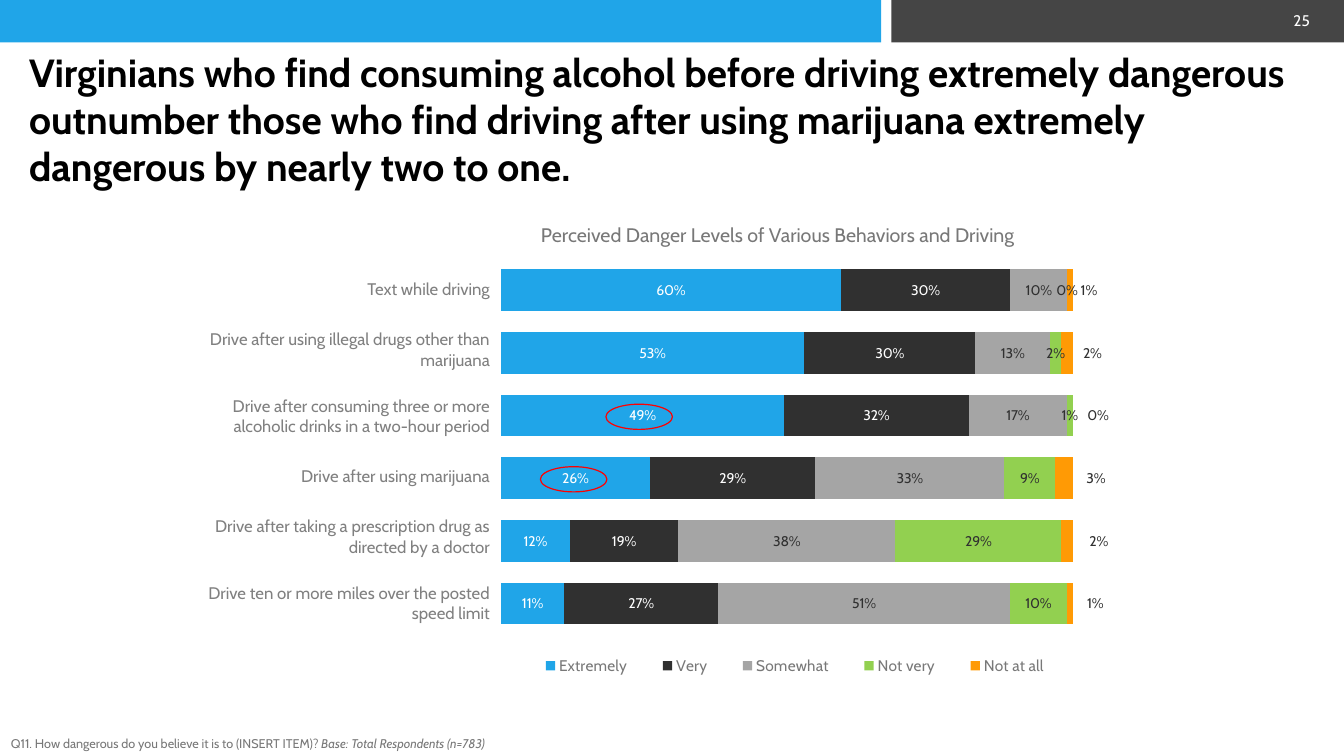
import dataclasses

import pptx
import pptx.chart.data
import pptx.dml.color
import pptx.enum.chart
import pptx.enum.shapes
import pptx.enum.text
import pptx.oxml
import pptx.oxml.ns
import pptx.util
from pptx.util import Inches

ALIGN = pptx.enum.text.PP_ALIGN
ANCHOR = pptx.enum.text.MSO_ANCHOR
SHAPE = pptx.enum.shapes.MSO_SHAPE


@dataclasses.dataclass(frozen=True)
class Theme:
    font: str = "Cabin"
    blue: str = "20A5E8"
    charcoal: str = "303030"
    silver: str = "A5A5A5"
    green: str = "92D050"
    orange: str = "FF9A05"
    band: str = "454545"
    grey: str = "787878"
    row_grey: str = "808080"
    black: str = "000000"
    white: str = "FFFFFF"
    red: str = "FF0000"
    headline: int = 28
    chart_title: int = 14
    row: int = 12
    small: int = 11
    label: int = 10
    footnote: int = 9


THEME = Theme()

# Behaviors from top to bottom: wording, shares per danger level, offset of the last label
BEHAVIORS = [
    ("Text while driving", (0.60, 0.30, 0.10, 0, 0.01), 0.03),
    ("Drive after using illegal drugs other than marijuana", (0.53, 0.30, 0.13, 0.02, 0.02), 0.04),
    ("Drive after consuming three or more alcoholic drinks in a two-hour period",
     (0.49, 0.32, 0.17, 0.01, 0), 0.04),
    ("Drive after using marijuana", (0.26, 0.29, 0.33, 0.09, 0.03), 0.05),
    ("Drive after taking a prescription drug as directed by a doctor",
     (0.12, 0.19, 0.38, 0.29, 0.02), 0.05),
    ("Drive ten or more miles over the posted speed limit", (0.11, 0.27, 0.51, 0.10, 0.01), 0.04),
]
# Danger levels: name, bar color, label color
LEVELS = [
    ("Extremely", THEME.blue, THEME.white),
    ("Very", THEME.charcoal, THEME.white),
    ("Somewhat", THEME.silver, THEME.charcoal),
    ("Not very", THEME.green, THEME.charcoal),
    ("Not at all", THEME.orange, THEME.charcoal),
]


def rgb(color):
    return pptx.dml.color.RGBColor.from_string(color)


def style_font(font, size, color):
    font.name = THEME.font
    font.size = pptx.util.Pt(size)
    font.color.rgb = rgb(color)


def add_run(paragraph, text, size, color, bold=False, italic=False):
    run = paragraph.add_run()
    run.text = text
    style_font(run.font, size, color)
    run.font.bold = bold
    run.font.italic = italic


def add_text(slide, box, runs, size, color, align=ALIGN.LEFT, anchor=ANCHOR.TOP):
    """Each run is a text followed by its emphasis."""
    frame = slide.shapes.add_textbox(*map(Inches, box)).text_frame
    frame.word_wrap = True
    frame.vertical_anchor = anchor
    frame.paragraphs[0].alignment = align
    for text, emphasis in runs:
        add_run(frame.paragraphs[0], text, size, color, **emphasis)


def add_outline_or_block(slide, kind, box, fill=None, line=None):
    shape = slide.shapes.add_shape(kind, *map(Inches, box))
    shape.shadow.inherit = False
    if fill:
        shape.fill.solid()
        shape.fill.fore_color.rgb = rgb(fill)
    else:
        shape.fill.background()
    if line:
        shape.line.color.rgb = rgb(line)
        shape.line.width = pptx.util.Pt(0.85)
    else:
        shape.line.fill.background()


def add_behavior_table(slide):
    table = slide.shapes.add_table(
        len(BEHAVIORS), 2, Inches(1.71), Inches(2.6), Inches(3.48), Inches(3.72)).table
    table.first_row = table.horz_banding = False
    for column, width in zip(table.columns, (3.25, 0.23)):
        column.width = Inches(width)
    for index, (behavior, _, _) in enumerate(BEHAVIORS):
        table.rows[index].height = Inches(0.54 if index % 3 == 0 else 0.66)
        for cell in table.rows[index].cells:
            cell.fill.solid()
            cell.fill.fore_color.rgb = rgb(THEME.white)
            cell.vertical_anchor = ANCHOR.MIDDLE
        paragraph = table.cell(index, 0).text_frame.paragraphs[0]
        paragraph.alignment = ALIGN.RIGHT
        add_run(paragraph, behavior, THEME.row, THEME.row_grey)


def manual_layout(**settings):
    """Layout element; the settings come in schema order."""
    fields = "".join(f'<c:{key} val="{value}"/>' for key, value in settings.items())
    return pptx.oxml.parse_xml(
        f'<c:layout {pptx.oxml.ns.nsdecls("c")}><c:manualLayout>{fields}</c:manualLayout></c:layout>')


def place_part(part, layout, before):
    """Put the layout in front of the child with the given tag."""
    for old in part.findall(pptx.oxml.ns.qn("c:layout")):
        part.remove(old)
    part.find(pptx.oxml.ns.qn(before)).addprevious(layout)


def add_danger_chart(slide):
    width, height = 6.3, 4.77
    bars = BEHAVIORS[::-1]
    data = pptx.chart.data.CategoryChartData(number_format="0%")
    data.categories = [str(number + 1) for number in range(len(bars))]
    for level, (name, _, _) in enumerate(LEVELS):
        data.add_series(name, [shares[level] for _, shares, _ in bars])
    chart = slide.shapes.add_chart(
        pptx.enum.chart.XL_CHART_TYPE.BAR_STACKED_100,
        Inches(4.86), Inches(2.48), Inches(width), Inches(height), data).chart
    chart.has_title = False
    style_font(chart.font, THEME.label, THEME.charcoal)
    chart.value_axis.has_major_gridlines = False
    chart.value_axis.visible = chart.category_axis.visible = False

    # Bars and their labels
    plot = chart.plots[0]
    plot.gap_width, plot.overlap = 50, 100
    plot.vary_by_categories = False
    for series, (_, fill, label_color) in zip(plot.series, LEVELS):
        series.format.fill.solid()
        series.format.fill.fore_color.rgb = rgb(fill)
        labels = series.data_labels
        labels.show_value = True
        labels.number_format, labels.number_format_is_linked = "0%", False
        style_font(labels.font, THEME.label, label_color)
        # Moved labels stand free, without leader lines
        for leader in series._element.iter(pptx.oxml.ns.qn("c:showLeaderLines")):
            leader.set("val", "0")

    # The last level is labeled to the right of the bars
    last = plot.series[len(LEVELS) - 1]
    for index, (_, shares, _) in enumerate(bars):
        paragraph = last.points[index].data_label.text_frame.paragraphs[0]
        add_run(paragraph, f"{shares[-1]:.0%}", THEME.label, THEME.charcoal)
    for label, (_, _, offset) in zip(last._element.iter(pptx.oxml.ns.qn("c:dLbl")), bars):
        place_part(label, manual_layout(x=offset, y=0), "c:tx")

    # Legend and plot area
    chart.has_legend = True
    chart.legend.position = pptx.enum.chart.XL_LEGEND_POSITION.BOTTOM
    chart.legend.include_in_layout = False
    style_font(chart.legend.font, THEME.small, THEME.grey)
    place_part(chart.legend._element,
               manual_layout(xMode="edge", yMode="edge", x=0.04, y=0.83, w=0.88, h=0.07),
               "c:overlay")
    place_part(plot._element.getparent(),
               manual_layout(layoutTarget="inner", xMode="edge", yMode="edge",
                             x=0.11 / width, y=0.09 / height,
                             w=5.67 / width, h=3.73 / height),
               "c:barChart")


def main():
    deck = pptx.Presentation()
    deck.slide_width, deck.slide_height = Inches(13.33), Inches(7.5)
    slide = deck.slides.add_slide(deck.slide_layouts[6])

    # Header
    add_outline_or_block(slide, SHAPE.RECTANGLE, (8.84, 0, 4.49, 0.42), fill=THEME.band)
    add_outline_or_block(slide, SHAPE.RECTANGLE, (0, 0, 8.74, 0.42), fill=THEME.blue)
    add_text(slide, (0.19, 0.6, 12.66, 1.16),
             [("Virginians who find consuming alcohol before driving extremely dangerous "
               "outnumber those who find driving after using marijuana extremely "
               "dangerous by nearly two to one.", {"bold": True})],
             THEME.headline, THEME.black, anchor=ANCHOR.MIDDLE)
    add_text(slide, (12.49, 0.04, 0.6, 0.33), [("25", {})],
             THEME.small, THEME.white, ALIGN.RIGHT, ANCHOR.MIDDLE)

    # Danger levels by behavior
    add_behavior_table(slide)
    add_danger_chart(slide)
    add_text(slide, (4.95, 2.16, 5.53, 0.34),
             [("Perceived Danger Levels of Various Behaviors and Driving", {})],
             THEME.chart_title, THEME.grey, ALIGN.CENTER)

    # Question wording
    add_text(slide, (0.01, 7.25, 8.16, 0.25),
             [("Q11. How dangerous do you believe it is to (INSERT ITEM)? ", {}),
              ("Base: Total Respondents (n=783)", {"italic": True})],
             THEME.footnote, THEME.grey)

    # Highlights on alcohol and marijuana
    for left, top in ((6.01, 4.01), (5.36, 4.63)):
        add_outline_or_block(slide, SHAPE.OVAL, (left, top, 0.66, 0.25), line=THEME.red)

    deck.save("out.pptx")


if __name__ == "__main__":
    main()
